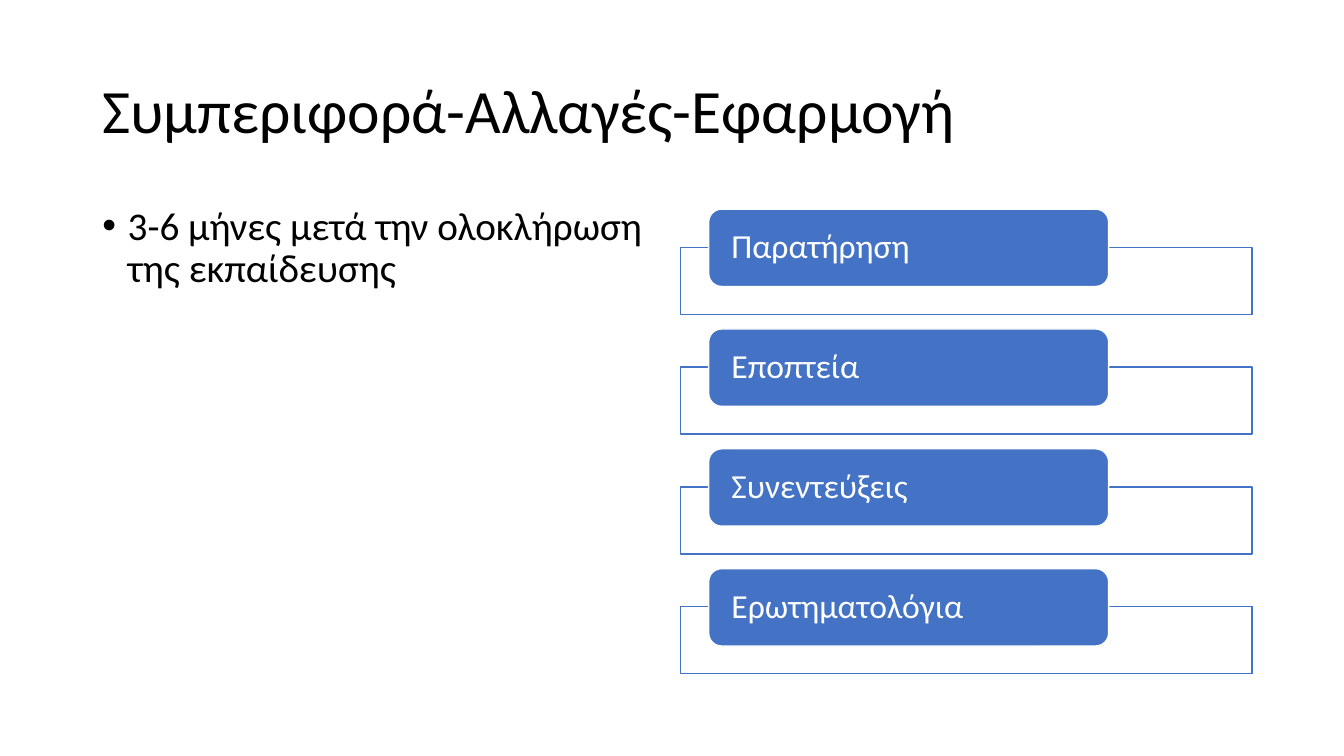
from lxml import etree
from pptx import Presentation
from pptx.dml.color import RGBColor
from pptx.enum.shapes import MSO_SHAPE
from pptx.enum.text import MSO_ANCHOR, PP_ALIGN
from pptx.oxml.ns import qn
from pptx.util import Cm, Pt

RECTANGLE = MSO_SHAPE.RECTANGLE
ROUNDED = MSO_SHAPE.ROUNDED_RECTANGLE
MIDDLE = MSO_ANCHOR.MIDDLE
LEFT = PP_ALIGN.LEFT
BLUE, WHITE, BLACK = "4472C4", "FFFFFF", "000000"
METHODS = ["Παρατήρηση", "Εποπτεία", "Συνεντεύξεις", "Ερωτηματολόγια"]


def color(value):
    return RGBColor.from_string(value)


def write(box, text, size, text_color):
    frame = box.text_frame
    frame.word_wrap = True
    frame.text = text
    para = frame.paragraphs[0]
    para.alignment = LEFT
    para.line_spacing = 0.9
    font = para.runs[0].font
    font.name = "Calibri"
    font.size = Pt(size)
    font.color.rgb = color(text_color)
    return para


deck = Presentation()
deck.slide_width, deck.slide_height = Cm(33.87), Cm(19.05)
page = deck.slides.add_slide(deck.slide_layouts[6])

# Title
title = page.shapes.add_textbox(Cm(2.33), Cm(1.01), Cm(29.21), Cm(3.68))
title.text_frame.vertical_anchor = MIDDLE
write(title, "Συμπεριφορά-Αλλαγές-Εφαρμογή", 44, BLACK)

# Bullet on the left
body = page.shapes.add_textbox(Cm(2.33), Cm(5.07), Cm(14.4), Cm(12.09))
para = write(body, "3-6 μήνες μετά την ολοκλήρωση της εκπαίδευσης", 28, BLACK)
properties = para._p.get_or_add_pPr()
properties.set("marL", str(Cm(0.64)))
properties.set("indent", str(-Cm(0.64)))
etree.SubElement(properties, qn("a:buFont")).set("typeface", "Arial")
etree.SubElement(properties, qn("a:buChar")).set("char", "•")

# Evaluation methods: a frame with a label over its top edge
for index, method in enumerate(METHODS):
    top = 5.27 + index * 3.02
    frame_box = page.shapes.add_shape(
        RECTANGLE, Cm(17.15), Cm(top + 0.96), Cm(14.4), Cm(1.69))
    label = page.shapes.add_shape(
        ROUNDED, Cm(17.86), Cm(top), Cm(10.08), Cm(1.95))
    for shape, fill, line in ((frame_box, WHITE, BLUE), (label, BLUE, WHITE)):
        shape.shadow.inherit = False
        shape.fill.solid()
        shape.fill.fore_color.rgb = color(fill)
        shape.line.color.rgb = color(line)
        shape.line.width = Pt(1)
    fill_color = frame_box.fill._xPr.find(qn("a:solidFill"))[0]
    etree.SubElement(fill_color, qn("a:alpha")).set("val", "90000")
    label_frame = label.text_frame
    label_frame.vertical_anchor = MIDDLE
    label_frame.margin_left = label_frame.margin_right = Cm(0.48)
    label_frame.margin_top = label_frame.margin_bottom = Cm(0.1)
    write(label, method, 24, WHITE)

deck.save("out.pptx")
